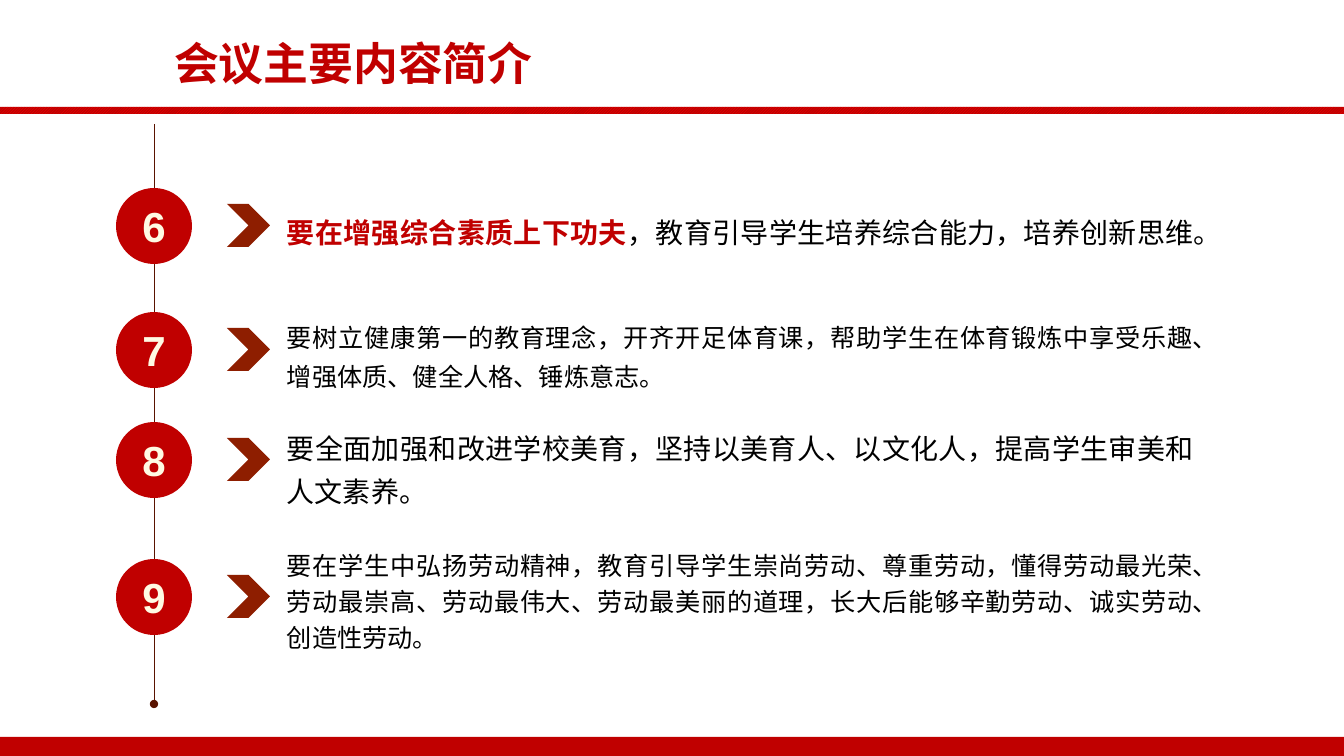
from lxml.etree import SubElement
from pptx import Presentation
from pptx.dml.color import RGBColor
from pptx.enum.dml import MSO_PATTERN
from pptx.enum.shapes import MSO_CONNECTOR, MSO_SHAPE
from pptx.enum.text import MSO_ANCHOR, MSO_AUTO_SIZE, PP_ALIGN
from pptx.oxml.ns import qn
from pptx.util import Emu, Pt

THEME = {
    "red": RGBColor(0xC0, 0x00, 0x00),
    "bright": RGBColor(0xFF, 0x00, 0x00),
    "rust": RGBColor(0x8E, 0x1E, 0x00),
    "dark": RGBColor(0x59, 0x13, 0x00),
    "cream": RGBColor(0xFF, 0xFA, 0xE3),
    "black": RGBColor(0x00, 0x00, 0x00),
    "cjk": "Noto Sans CJK SC",
    "latin": "Arial",
    "title": Pt(32),
    "number": Pt(30),
    "large": Pt(20),
    "small": Pt(18),
}


def px(*lengths):
    return [Emu(round(length * 914400 / 100.8)) for length in lengths]


def add_run(paragraph, text, latin, **font_format):
    run = paragraph.add_run()
    run.text = text
    for attribute, value in font_format.items():
        if attribute == "color":
            run.font.color.rgb = value
        else:
            setattr(run.font, attribute, value)
    run.font.name = latin
    SubElement(run.font._element, qn("a:ea")).set("typeface", THEME["cjk"])


presentation = Presentation()
presentation.slide_width, presentation.slide_height = px(1344, 756)
slide = presentation.slides.add_slide(presentation.slide_layouts[5])
shapes = slide.shapes

heading = shapes.title
heading.left, heading.top, heading.width, heading.height = px(164, 31, 682, 65)
heading_format = {
    "word_wrap": True,
    "vertical_anchor": MSO_ANCHOR.TOP,
    "auto_size": MSO_AUTO_SIZE.SHAPE_TO_FIT_TEXT,
}
for attribute, value in heading_format.items():
    setattr(heading.text_frame, attribute, value)
heading_line = heading.text_frame.paragraphs[0]
heading_line.alignment = PP_ALIGN.LEFT
add_run(heading_line, "会议主要内容简介", THEME["cjk"],
        size=THEME["title"], bold=True, color=THEME["red"])

footer_band = shapes.add_shape(MSO_SHAPE.RECTANGLE, *px(0, 737, 1344, 19))
footer_band.fill.solid()
footer_band.fill.fore_color.rgb = THEME["red"]
header_rule = shapes.add_shape(MSO_SHAPE.RECTANGLE, *px(0, 107, 1344, 7))
header_rule.fill.patterned()
header_rule.fill.pattern = MSO_PATTERN.DARK_UPWARD_DIAGONAL
header_rule.fill.fore_color.rgb = THEME["bright"]
header_rule.fill.back_color.rgb = THEME["red"]
for band in (footer_band, header_rule):
    band.line.fill.background()
    band.shadow.inherit = False

timeline = shapes.add_connector(MSO_CONNECTOR.STRAIGHT, *px(154, 124, 154, 704))
timeline.line.color.rgb = THEME["dark"]
timeline.line.width = Pt(0.5)
SubElement(timeline.line._get_or_add_ln(), qn("a:tailEnd")).set("type", "oval")
SubElement(timeline._element.spPr, qn("a:effectLst"))

points = [
    ("6", 188, 200, 54, "large", 1.3, "要在增强综合素质上下功夫",
     "，教育引导学生培养综合能力，培养创新思维。"),
    ("7", 312, 308, 86, "small", 1.3, "",
     "要树立健康第一的教育理念，开齐开足体育课，帮助学生在体育锻炼中享受乐趣、"
     "增强体质、健全人格、锤炼意志。"),
    ("8", 422, 416, 94, "large", 1.3, "",
     "要全面加强和改进学校美育，坚持以美育人、以文化人，提高学生审美和人文素养。"),
    ("9", 559, 539, 117, "small", 1.2, "",
     "要在学生中弘扬劳动精神，教育引导学生崇尚劳动、尊重劳动，懂得劳动最光荣、"
     "劳动最崇高、劳动最伟大、劳动最美丽的道理，长大后能够辛勤劳动、诚实劳动、"
     "创造性劳动。"),
]

for number, badge_top, text_top, text_height, size, spacing, emphasis, message in points:
    badge = shapes.add_shape(MSO_SHAPE.ROUNDED_RECTANGLE, *px(116, badge_top, 76, 76))
    badge.adjustments[0] = 0.5
    arrow = shapes.add_shape(MSO_SHAPE.CHEVRON, *px(227, badge_top + 16, 43, 43))
    for marker, color in ((badge, "red"), (arrow, "rust")):
        marker.fill.solid()
        marker.fill.fore_color.rgb = THEME[color]
        marker.line.fill.background()
        marker.shadow.inherit = False
    badge.text_frame.vertical_anchor = MSO_ANCHOR.MIDDLE
    badge_line = badge.text_frame.paragraphs[0]
    badge_line.alignment = PP_ALIGN.CENTER
    add_run(badge_line, number, THEME["latin"],
            size=THEME["number"], bold=True, color=THEME["cream"])

    statement = shapes.add_textbox(*px(277, text_top, 927, text_height)).text_frame
    statement.word_wrap = True
    statement.auto_size = MSO_AUTO_SIZE.SHAPE_TO_FIT_TEXT
    statement_line = statement.paragraphs[0]
    statement_line.alignment = PP_ALIGN.JUSTIFY
    statement_line.line_spacing = spacing
    if emphasis:
        add_run(statement_line, emphasis, THEME["latin"],
                size=THEME[size], bold=True, color=THEME["red"])
    add_run(statement_line, message, THEME["latin"],
            size=THEME[size], bold=False, color=THEME["black"])

presentation.save("out.pptx")
